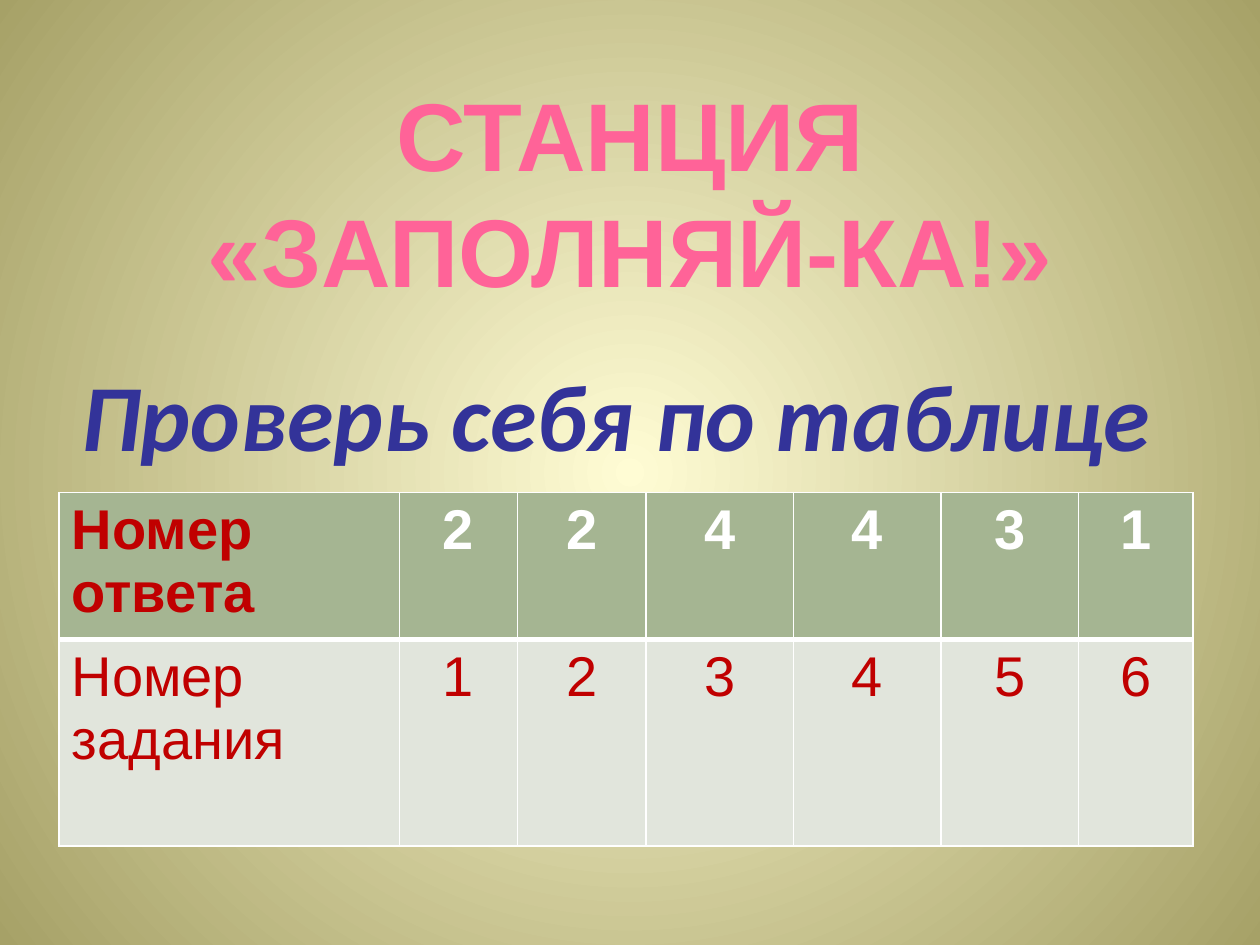
from lxml import etree
from pptx import Presentation
from pptx.dml.color import RGBColor
from pptx.enum import text
from pptx.oxml import ns
from pptx.util import Pt

ANSWERS = ["Номер ответа", "2", "2", "4", "4", "3", "1"]
TASKS = ["Номер задания", "1", "2", "3", "4", "5", "6"]
COLUMN_WIDTHS = [194.4, 67.6, 73.4, 84.3, 84.3, 78.5, 65.5]
ROW_HEIGHTS = [79, 118]
RED, WHITE = "C00000", "FFFFFF"


def rgb(value):
    """Turn a hex string into a colour."""
    return RGBColor.from_string(value)


def style(paragraph, font_name, size, color, bold=True, italic=False, centred=True):
    """Format the runs of a paragraph and align it."""
    paragraph.alignment = text.PP_ALIGN.CENTER if centred else text.PP_ALIGN.LEFT
    for run in paragraph.runs:
        run.font.name, run.font.size = font_name, Pt(size)
        run.font.bold, run.font.italic = bold, italic
        run.font.color.rgb = rgb(color)


def paint_background(slide):
    """Fill the background with a gradient that spreads from the centre."""
    fill = slide.background.fill
    fill.gradient()
    for stop, color in zip(fill.gradient_stops, ("FFFCD4", "A6A167")):
        stop.color.rgb = rgb(color)
    gradient = slide.element.find(".//" + ns.qn("a:gradFill"))
    gradient.remove(gradient.find(ns.qn("a:lin")))
    path = etree.SubElement(gradient, ns.qn("a:path"), path="circle")
    etree.SubElement(path, ns.qn("a:fillToRect"), l="50000", t="50000", r="50000", b="50000")


def add_heading(slide, box, wording, anchor, **look):
    """Place a centred heading in its box."""
    frame = slide.shapes.add_textbox(*map(Pt, box)).text_frame
    frame.word_wrap = True
    frame.vertical_anchor = anchor
    frame.text = wording
    for paragraph in frame.paragraphs:
        style(paragraph, **look)


def set_borders(cell, bottom):
    """Draw white cell borders with the given bottom width."""
    properties = cell._tc.get_or_add_tcPr()
    for index, (side, width) in enumerate(zip("LRTB", (1, 1, 1, bottom))):
        line = etree.Element(ns.qn("a:ln" + side), w=str(Pt(width)))
        fill = etree.SubElement(line, ns.qn("a:solidFill"))
        etree.SubElement(fill, ns.qn("a:srgbClr"), val=WHITE)
        properties.insert(index, line)


def add_answer_table(slide, left, top):
    """Place the table that matches answers to tasks."""
    table = slide.shapes.add_table(
        len(ROW_HEIGHTS), len(COLUMN_WIDTHS), Pt(left), Pt(top),
        Pt(sum(COLUMN_WIDTHS)), Pt(sum(ROW_HEIGHTS))).table
    for column, width in zip(table.columns, COLUMN_WIDTHS):
        column.width = Pt(width)
    looks = [(ANSWERS, "A5B592", WHITE, True, 3), (TASKS, "E1E5DC", RED, False, 1)]
    for row, height, (entries, fill, number_color, bold, bottom) in zip(table.rows, ROW_HEIGHTS, looks):
        row.height = Pt(height)
        for index, (cell, entry) in enumerate(zip(row.cells, entries)):
            cell.text = entry
            style(cell.text_frame.paragraphs[0], "Arial", 32,
                  number_color if index else RED, bold, centred=index > 0)
            cell.fill.solid()
            cell.fill.fore_color.rgb = rgb(fill)
            set_borders(cell, bottom)


def main():
    """Build the slide and save it."""
    deck = Presentation()
    deck.slide_width, deck.slide_height = Pt(720), Pt(540)
    slide = deck.slides.add_slide(deck.slide_layouts[6])
    paint_background(slide)
    add_heading(slide, (0, 39.6, 720, 140.4), "СТАНЦИЯ\n«ЗАПОЛНЯЙ-КА!»",
                text.MSO_ANCHOR.TOP, font_name="Arial", size=55, color="FF6398")
    add_heading(slide, (28, 191.5, 648, 90), "Проверь себя по таблице",
                text.MSO_ANCHOR.MIDDLE, font_name="Calibri", size=54, color="333399", italic=True)
    add_answer_table(slide, 33.8, 281.5)
    deck.save("out.pptx")


if __name__ == "__main__":
    main()
